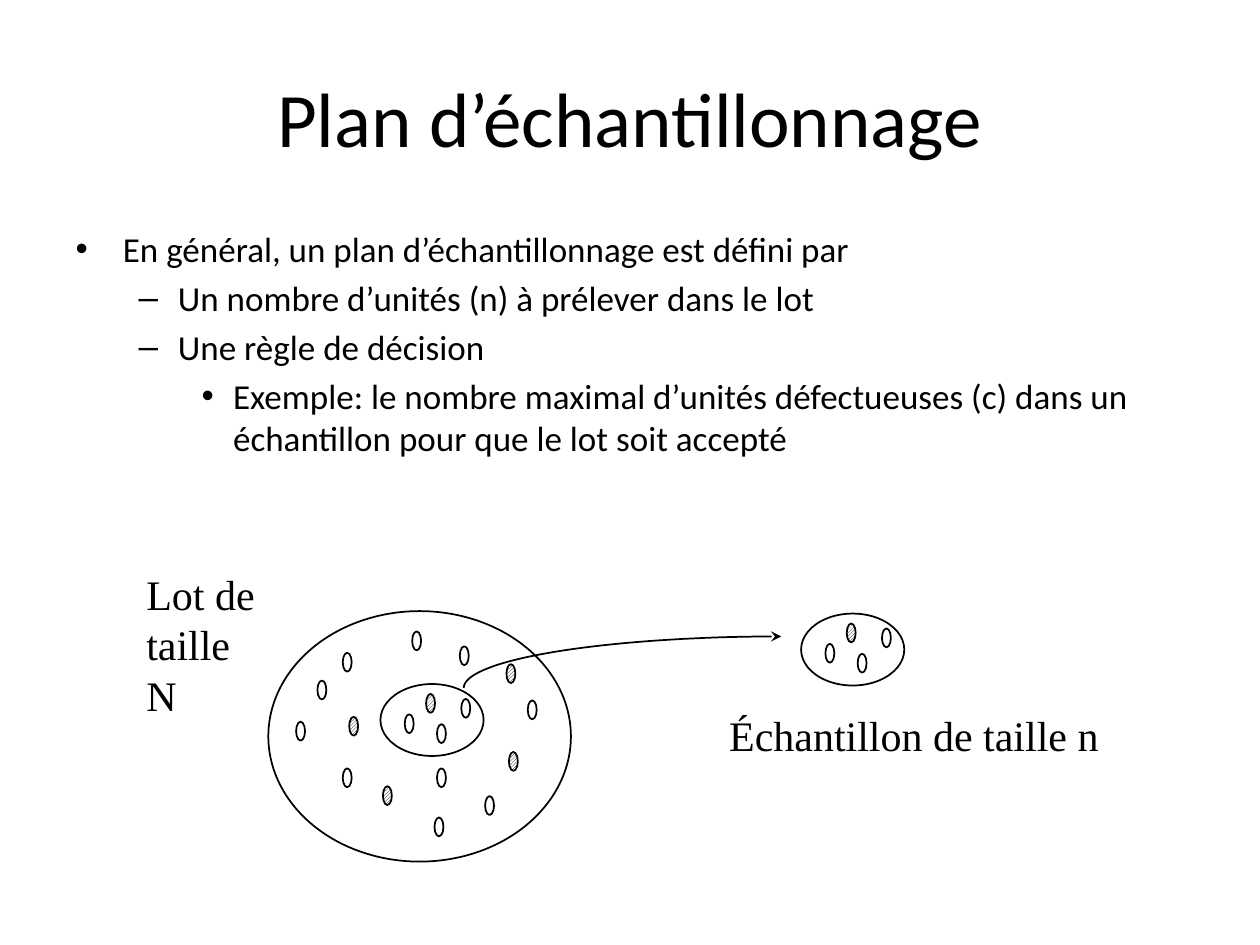
import math

import pptx
import pptx.dml.color
import pptx.enum.dml
import pptx.enum.shapes
import pptx.enum.text
import pptx.oxml
import pptx.oxml.ns
import pptx.util

Cm = pptx.util.Cm
Pt = pptx.util.Pt

COLORS = {"ink": "000000", "paper": "FFFFFF"}
UNIT = (0.18, 0.38)
SAMPLE = (2.08, 1.45)

POINTS = [
    (0, "En général, un plan d’échantillonnage est défini par"),
    (1, "Un nombre d’unités (n) à prélever dans le lot"),
    (1, "Une règle de décision"),
    (2, "Exemple: le nombre maximal d’unités défectueuses (c) dans un "
        "échantillon pour que le lot soit accepté"),
]

# Unit places in cm: on the slide for the lot, within the ellipse for a sample
LOT_BAD = [(10.21, 13.39), (7.04, 14.45), (7.72, 15.85), (10.26, 15.16)]
LOT_GOOD = [
    (6.91, 15.49), (6.91, 13.16), (5.97, 14.55), (8.31, 12.73), (9.27, 13.03),
    (8.76, 16.48), (9.78, 16.05), (10.64, 14.12), (6.4, 13.72), (8.81, 15.49),
]
SAMPLE_BAD = [(0.92, 0.2)]
SAMPLE_GOOD = [(0.49, 0.61), (1.63, 0.3), (1.14, 0.81)]


def color(name):
    return pptx.dml.color.RGBColor.from_string(COLORS[name])


def write(para, text, font, size):
    run = para.add_run()
    run.text = text
    run.font.name = font
    run.font.size = Pt(size)
    run.font.color.rgb = color("ink")


def place(shape, left, top, width, height):
    shape.left, shape.top = Cm(left), Cm(top)
    shape.width, shape.height = Cm(width), Cm(height)


def outline(shape):
    shape.shadow.inherit = False
    shape.fill.background()
    shape.line.color.rgb = color("ink")
    shape.line.width = Pt(1)


def oval(slide, spot, size):
    kind = pptx.enum.shapes.MSO_SHAPE.OVAL
    shape = slide.shapes.add_shape(kind, *map(Cm, spot + size))
    outline(shape)
    return shape


def units(slide, bad, good, origin=(0, 0)):
    """Draw the defective (hatched) units, then the good ones."""
    for idx, (x, y) in enumerate(bad + good):
        shape = oval(slide, (origin[0] + x, origin[1] + y), UNIT)
        if idx < len(bad):
            fill = shape.fill
            fill.patterned()
            fill.pattern = pptx.enum.dml.MSO_PATTERN.DARK_UPWARD_DIAGONAL
            fill.fore_color.rgb = color("ink")
            fill.back_color.rgb = color("paper")


def sample(slide, origin):
    units(slide, SAMPLE_BAD, SAMPLE_GOOD, origin)
    oval(slide, origin, SAMPLE)


def label(slide, lines, box, wrap):
    frame = slide.shapes.add_textbox(*map(Cm, box)).text_frame
    frame.word_wrap = wrap
    for idx, line in enumerate(lines):
        para = frame.add_paragraph() if idx else frame.paragraphs[0]
        write(para, line, "Times New Roman", 24)


def arrow(slide, start, end, steps=40):
    """Draw a quarter ellipse that rises from start and levels off at end."""
    wide, high = end[0] - start[0], start[1] - end[1]
    turns = [math.pi / 2 * i / steps for i in range(steps + 1)]
    spots = [(Cm(end[0] - wide * math.cos(t)), Cm(start[1] - high * math.sin(t)))
             for t in turns]
    path = slide.shapes.build_freeform(*spots[0])
    path.add_line_segments(spots[1:], close=False)
    shape = path.convert_to_shape()
    outline(shape)
    line = shape.element.spPr.find(pptx.oxml.ns.qn("a:ln"))
    line.append(pptx.oxml.parse_xml(
        '<a:tailEnd %s type="stealth"/>' % pptx.oxml.ns.nsdecls("a")))


def title(slide):
    shape = slide.shapes.title
    place(shape, 1.27, 0.76, 22.86, 3.18)
    para = shape.text_frame.paragraphs[0]
    para.alignment = pptx.enum.text.PP_ALIGN.CENTER
    write(para, "Plan d’échantillonnage", "Calibri", 44)


def body(slide):
    shape = slide.placeholders[1]
    place(shape, 1.27, 4.45, 22.86, 12.57)
    frame = shape.text_frame
    for idx, (level, text) in enumerate(POINTS):
        para = frame.add_paragraph() if idx else frame.paragraphs[0]
        para.level = level
        write(para, text, "Calibri", 20)


def main():
    deck = pptx.Presentation()
    deck.slide_width, deck.slide_height = Cm(25.4), Cm(19.05)
    slide = deck.slides.add_slide(deck.slide_layouts[1])
    title(slide)
    body(slide)
    oval(slide, (5.41, 12.32), (6.1, 5.05))
    units(slide, LOT_BAD, LOT_GOOD)
    sample(slide, (16.15, 12.37))
    sample(slide, (7.67, 13.79))
    label(slide, ["Lot de", "taille N"], (2.7, 11.33, 3, 2.29), True)
    label(slide, ["Échantillon de taille n"], (14.45, 14.17, 7.98, 1.27), False)
    arrow(slide, (9.35, 13.87), (15.75, 12.83))
    deck.save("out.pptx")


if __name__ == "__main__":
    main()
